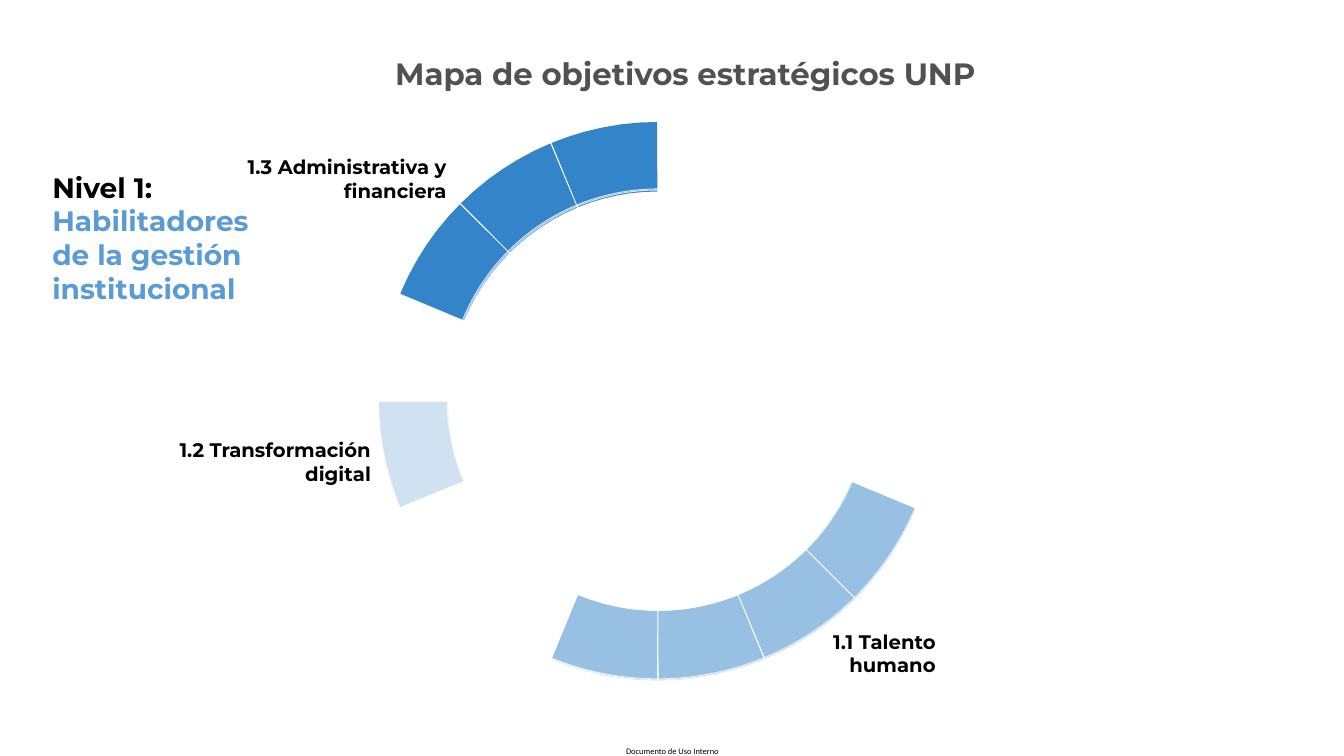
from dataclasses import dataclass
from math import cos, radians, sin

from lxml.etree import SubElement
from pptx import Presentation
from pptx.dml.color import RGBColor
from pptx.enum.shapes import MSO_SHAPE
from pptx.enum.text import MSO_ANCHOR, MSO_AUTO_SIZE, PP_ALIGN
from pptx.oxml.ns import qn
from pptx.shapes.autoshape import Shape
from pptx.slide import Slide
from pptx.util import Inches, Pt

BLUE = RGBColor(0x34, 0x84, 0xC9)
LIGHT_BLUE = RGBColor(0x5B, 0x9B, 0xD5)
GRAY = RGBColor(0x51, 0x51, 0x51)
BLACK = RGBColor(0, 0, 0)
WHITE = RGBColor(0xFF, 0xFF, 0xFF)

CENTER_X, CENTER_Y = 6.525, 3.98
INNER_RADIUS, OUTER_RADIUS = 2.08, 2.77
SECTOR_ANGLE = 22.5
GAP_ANGLE = 0.15
ARC_STEPS = 6
RING_WIDTH = 0.01

Point = tuple[int, int]


@dataclass(frozen=True)
class Objective:
    sectors: range
    opacity: int
    label: str
    left: float
    top: float
    width: float


@dataclass(frozen=True)
class Span:
    text: str
    size: float
    color: RGBColor
    font: str = "Montserrat"
    bold: bool = True


OBJECTIVES = [
    Objective(range(9, 12), 100, "1.3 Administrativa y financiera", 2.36, 1.48, 2.13),
    Objective(range(1, 5), 51, "1.1 Talento humano", 7.59, 6.19, 1.75),
    Objective(range(7, 8), 23, "1.2 Transformación digital", 1.61, 4.29, 2.13),
]
RING_CENTERS = [(6.53, 3.97), (6.52, 3.96)]
RING_RADII = [2.78, 2.09]


def arc(radius: float, start: float, end: float) -> list[Point]:
    angles = [radians(start + (end - start) * step / ARC_STEPS) for step in range(ARC_STEPS + 1)]
    return [(Inches(CENTER_X + radius * cos(angle)), Inches(CENTER_Y + radius * sin(angle)))
            for angle in angles]


def paint(shape: Shape, color: RGBColor, opacity: int) -> None:
    shape.shadow.inherit = False
    shape.line.fill.background()
    shape.fill.solid()
    shape.fill.fore_color.rgb = color
    if opacity < 100:
        color_element = shape.fill._xPr.find(qn("a:solidFill"))[0]
        SubElement(color_element, qn("a:alpha")).set("val", str(opacity * 1000))


def draw_sector(page: Slide, number: int, opacity: int) -> None:
    start = number * SECTOR_ANGLE + GAP_ANGLE
    end = (number + 1) * SECTOR_ANGLE - GAP_ANGLE
    outline = arc(OUTER_RADIUS, start, end) + arc(INNER_RADIUS, end, start)
    builder = page.shapes.build_freeform(*outline[0])
    builder.add_line_segments(outline[1:], close=True)
    paint(builder.convert_to_shape(), BLUE, opacity)


def draw_ring(page: Slide, center_x: float, center_y: float, radius: float) -> None:
    side = Inches(2 * radius)
    ring = page.shapes.add_shape(MSO_SHAPE.DONUT, Inches(center_x - radius),
                                 Inches(center_y - radius), side, side)
    ring.adjustments[0] = RING_WIDTH / (2 * radius)
    paint(ring, WHITE, 76)


def write(box: Shape, spans: list[Span], inset_x: float = 0.1, inset_y: float = 0.05,
          align: PP_ALIGN = PP_ALIGN.LEFT, anchor: MSO_ANCHOR = MSO_ANCHOR.TOP) -> None:
    frame = box.text_frame
    frame.word_wrap = True
    frame.auto_size = MSO_AUTO_SIZE.SHAPE_TO_FIT_TEXT
    frame.vertical_anchor = anchor
    frame.margin_left = frame.margin_right = Inches(inset_x)
    frame.margin_top = frame.margin_bottom = Inches(inset_y)
    para = frame.paragraphs[0]
    para.alignment = align
    for span in spans:
        run = para.add_run()
        run.text = span.text
        run.font.name = span.font
        run.font.size = Pt(span.size)
        run.font.bold = span.bold
        run.font.color.rgb = span.color


def add_box(page: Slide, left: float, top: float, width: float, height: float) -> Shape:
    return page.shapes.add_textbox(Inches(left), Inches(top), Inches(width), Inches(height))


def main() -> None:
    deck = Presentation()
    deck.slide_width, deck.slide_height = Inches(13.33), Inches(7.5)
    page = deck.slides.add_slide(deck.slide_layouts[5])

    title = page.shapes.title
    title.left, title.top = Inches(3.82), Inches(0.49)
    title.width, title.height = Inches(6.36), Inches(0.47)
    write(title, [Span("Mapa de objetivos estratégicos UNP", 22, GRAY)])

    write(add_box(page, 6.21, 7.4, 0.94, 0.1),
          [Span("Documento de Uso Interno", 6, BLACK, "Calibri", False)], 0, 0)

    for objective in OBJECTIVES:
        for number in objective.sectors:
            draw_sector(page, number, objective.opacity)
    for center_x, center_y in RING_CENTERS:
        for radius in RING_RADII:
            draw_ring(page, center_x, center_y, radius)

    write(add_box(page, 0.42, 1.64, 2.59, 1.45),
          [Span("Nivel 1: ", 20, BLACK),
           Span("Habilitadores de la gestión institucional", 20, LIGHT_BLUE)])
    for objective in OBJECTIVES:
        write(add_box(page, objective.left, objective.top, objective.width, 0.58),
              [Span(objective.label, 14, BLACK)], 0.06, 0.06,
              PP_ALIGN.RIGHT, MSO_ANCHOR.MIDDLE)

    deck.save("out.pptx")


if __name__ == "__main__":
    main()
